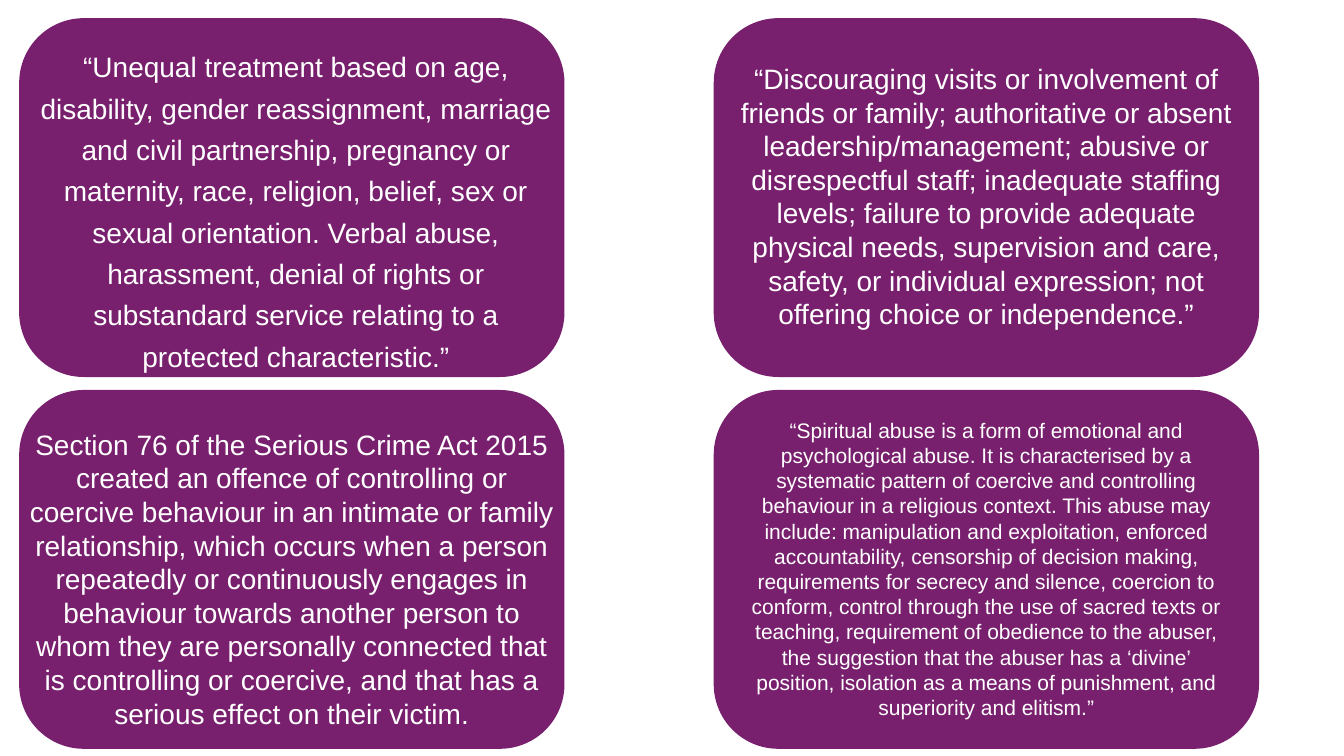
from pptx import Presentation
from pptx.dml.color import RGBColor
from pptx.enum.shapes import MSO_SHAPE
from pptx.enum.text import MSO_AUTO_SIZE, PP_ALIGN
from pptx.util import Pt

COLORS = {"card": "78206E", "text": "FFFFFF"}
CARD_W, CARD_H = 389.5, 256.3
LEFT, RIGHT = 13.7, 509.8
TOP, BOTTOM = 13, 278.6

cards = [
    {"left": LEFT, "top": TOP, "text_top": 26.6, "text_h": 242.6, "inset": 0,
     "margin_left": 13, "size": 20, "spacing": 1.23,
     "text": "“Unequal treatment based on age, disability, gender reassignment, "
             "marriage and civil partnership, pregnancy or maternity, race, religion, "
             "belief, sex or sexual orientation. Verbal abuse, harassment, denial of "
             "rights or substandard service relating to a protected characteristic.”"},
    {"left": RIGHT, "top": TOP, "text_top": 40.3, "text_h": 200.9, "inset": 0,
     "margin_left": 7.2, "size": 20, "spacing": 1.0,
     "text": "“Discouraging visits or involvement of friends or family; authoritative "
             "or absent leadership/management; abusive or disrespectful staff; "
             "inadequate staffing levels; failure to provide adequate physical needs, "
             "supervision and care, safety, or individual expression; not offering "
             "choice or independence.”"},
    {"left": LEFT, "top": BOTTOM, "text_top": 301.7, "text_h": 225.4, "inset": 0,
     "margin_left": 7.2, "size": 20, "spacing": 1.0,
     "text": "Section 76 of the Serious Crime Act 2015 created an offence of "
             "controlling or coercive behaviour in an intimate or family relationship, "
             "which occurs when a person repeatedly or continuously engages in "
             "behaviour towards another person to whom they are personally connected "
             "that is controlling or coercive, and that has a serious effect on their "
             "victim."},
    {"left": RIGHT, "top": BOTTOM, "text_top": 294.5, "text_h": 225.4, "inset": 13,
     "margin_left": 7.2, "size": 15, "spacing": 1.0,
     "text": "“Spiritual abuse is a form of emotional and psychological abuse. It is "
             "characterised by a systematic pattern of coercive and controlling "
             "behaviour in a religious context. This abuse may include: manipulation "
             "and exploitation, enforced accountability, censorship of decision making, "
             "requirements for secrecy and silence, coercion to conform, control "
             "through the use of sacred texts or teaching, requirement of obedience to "
             "the abuser, the suggestion that the abuser has a ‘divine’ position, "
             "isolation as a means of punishment, and superiority and elitism.”"},
]

prs = Presentation()
prs.slide_width, prs.slide_height = Pt(960), Pt(540)
s = prs.slides.add_slide(prs.slide_layouts[6])

for card in cards:
    sp = s.shapes.add_shape(MSO_SHAPE.ROUNDED_RECTANGLE, Pt(card["left"]),
                            Pt(card["top"]), Pt(CARD_W), Pt(CARD_H))
    sp.adjustments[0] = 0.18
    sp.shadow.inherit = False
    sp.fill.solid()
    sp.fill.fore_color.rgb = RGBColor.from_string(COLORS["card"])
    sp.line.fill.background()

for card in cards:
    box = s.shapes.add_textbox(Pt(card["left"] + card["inset"]), Pt(card["text_top"]),
                               Pt(CARD_W - 2 * card["inset"]), Pt(card["text_h"]))
    tf = box.text_frame
    frame_format = {"word_wrap": True, "auto_size": MSO_AUTO_SIZE.SHAPE_TO_FIT_TEXT,
                    "margin_left": Pt(card["margin_left"])}
    for name, value in frame_format.items():
        setattr(tf, name, value)
    p = tf.paragraphs[0]
    p.alignment = PP_ALIGN.CENTER
    p.line_spacing = card["spacing"]
    r = p.add_run()
    r.text = card["text"]
    for name, value in {"name": "Arial", "size": Pt(card["size"])}.items():
        setattr(r.font, name, value)
    r.font.color.rgb = RGBColor.from_string(COLORS["text"])

prs.save("out.pptx")
